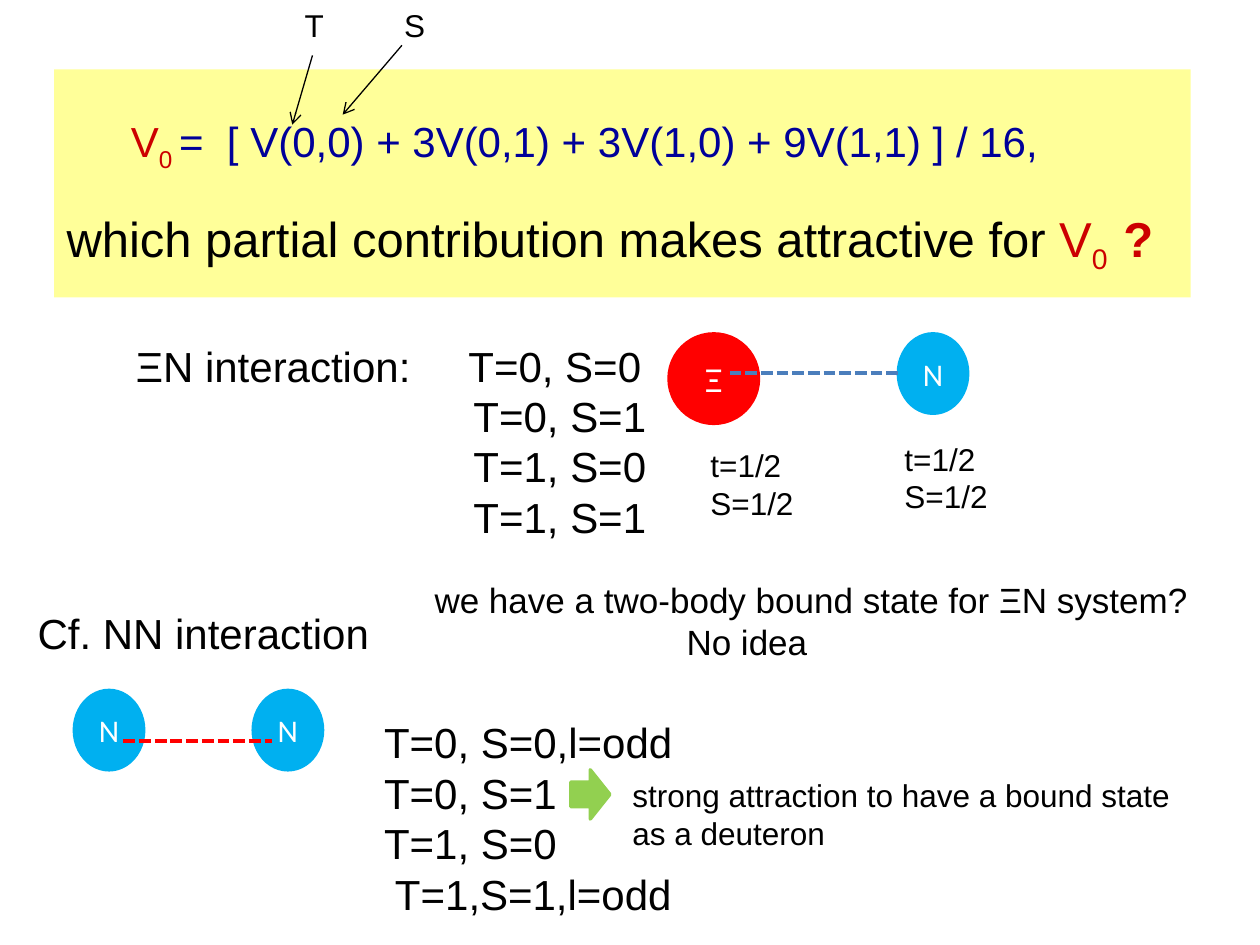
from lxml import etree
from pptx import Presentation
from pptx.dml.color import RGBColor
from pptx.enum.dml import MSO_LINE
from pptx.enum.shapes import MSO_CONNECTOR, MSO_SHAPE
from pptx.enum.text import MSO_ANCHOR, PP_ALIGN
from pptx.oxml.ns import qn
from pptx.util import Inches, Pt

STRAIGHT = MSO_CONNECTOR.STRAIGHT
DASH = MSO_LINE.SQUARE_DOT
RECTANGLE = MSO_SHAPE.RECTANGLE
OVAL = MSO_SHAPE.OVAL
RIGHT_ARROW = MSO_SHAPE.RIGHT_ARROW
MIDDLE = MSO_ANCHOR.MIDDLE
CENTER = PP_ALIGN.CENTER
COLUMNS, ROWS = 100, 75
OVAL_LEFT = 2

BLACK, WHITE, RED, BLUE = "000000", "FFFFFF", "FF0000", "00B0F0"
CRIMSON, NAVY, YELLOW, GREEN, STEEL = "CC0000", "000099", "FFFF99", "92D050", "4B7EBC"


def color(value):
    return RGBColor.from_string(value)


class SlideBuilder:
    def __init__(self, deck):
        self.deck = deck
        self.slide = deck.slides.add_slide(deck.slide_layouts[6])
        self.column = deck.slide_width / COLUMNS
        self.row = deck.slide_height / ROWS

    def place(self, *lengths):
        units = (self.column, self.row) * 2
        return [round(length * unit) for length, unit in zip(lengths, units)]

    def add_spans(self, para, spans, size, ink=BLACK, font="Arial"):
        for text, changes in spans:
            span = para.add_run()
            span.text = text
            values = {"size": Pt(size), "name": font, "bold": changes.get("bold", False)}
            for name, value in values.items():
                setattr(span.font, name, value)
            span.font.color.rgb = color(changes.get("ink", ink))
            if "baseline" in changes:
                span._r.get_or_add_rPr().set("baseline", str(changes["baseline"] * 1000))

    def text(self, at, lines, size, wrap=False, indents=(), tab=None, **spacing):
        box = self.slide.shapes.add_textbox(*self.place(*at))
        frame = box.text_frame
        frame.word_wrap = wrap
        for index, line in enumerate(lines):
            para = frame.paragraphs[0] if index == 0 else frame.add_paragraph()
            for name, value in spacing.items():
                setattr(para, name, value)
            self.add_spans(para, [(line, {})] if isinstance(line, str) else line, size)
            properties = para._p.get_or_add_pPr()
            if indents and indents[index]:
                properties.set("marL", str(Inches(indents[index])))
                properties.set("indent", "0")
            if tab and index == 0:
                stops = etree.SubElement(properties, qn("a:tabLst"))
                etree.SubElement(stops, qn("a:tab"), pos=str(Inches(tab)), algn="l")

    def shape(self, kind, at, fill, outline=True, label="", size=18):
        shape = self.slide.shapes.add_shape(kind, *self.place(*at))
        shape.shadow.inherit = False
        shape.fill.solid()
        shape.fill.fore_color.rgb = color(fill)
        if outline:
            shape.line.color.rgb = color(fill)
            shape.line.width = Pt(2)
        else:
            shape.line.fill.background()
        if label:
            frame = shape.text_frame
            frame.vertical_anchor = MIDDLE
            para = frame.paragraphs[0]
            para.alignment = CENTER
            self.add_spans(para, [(label, {})], size, WHITE, "Calibri")
        return shape

    def nucleon(self, left, top):
        return self.shape(OVAL, (left, top, 5.5, 6.3), BLUE, label="N")

    def line(self, start, end, ink, width, dash=None, arrow=False):
        line = self.slide.shapes.add_connector(STRAIGHT, *self.place(*start, *end))
        line.line.color.rgb = color(ink)
        line.line.width = Pt(width)
        if dash:
            line.line.dash_style = dash
        properties = line._element.spPr
        if arrow:
            etree.SubElement(properties.find(qn("a:ln")), qn("a:tailEnd"), type="arrow")
        etree.SubElement(properties, qn("a:effectLst"))
        return line


def build():
    deck = Presentation()
    deck.slide_width, deck.slide_height = Inches(10), Inches(7.5)
    page = SlideBuilder(deck)

    page.shape(RECTANGLE, (4.3, 5.5, 90.2, 18.1), YELLOW, outline=False)
    question = [
        ("which partial contribution makes attractive for ", {}),
        ("V", {"ink": CRIMSON}),
        ("0  ", {"ink": CRIMSON, "baseline": -25}),
        ("?", {"ink": CRIMSON, "bold": True}),
    ]
    page.text((4.3, 15, 89.7, 6.1), [question], 28, line_spacing=1.2)
    formula = [
        ("V", {"ink": CRIMSON}),
        ("0 ", {"ink": CRIMSON, "baseline": -25}),
        ("=  [ V(0,0) + 3V(0,1) + 3V(1,0) + 9V(1,1) ] / 16,", {"ink": NAVY}),
    ]
    page.text((9.4, 8.7, 75.2, 5.1), [formula], 24, wrap=True, space_before=Pt(7))
    for name, left, start, end in (
        ("T", 23.2, (24.8, 4.4), (23.2, 9.9)),
        ("S", 31.1, (31.9, 3.6), (27.2, 9.1)),
    ):
        page.line(start, end, BLACK, 0.75, arrow=True)
        page.text((left, 0, 3.7, 4), [name], 18)

    channels = ["ΞN interaction:\tT=0, S=0", "T=0, S=1", "T=1, S=0", "T=1, S=1"]
    page.text((9.8, 26.5, 42.7, 17.2), channels, 24, indents=(0, 2.68, 2.68, 2.68), tab=2.64)
    page.shape(OVAL, (53.1, 26.5, 7.1, 7.1), RED, label="Ξ", size=20)
    partner = page.nucleon(71.3, 26.5)
    bond = page.line((57.9, 29.6), (71.3, 29.6), STEEL, 2.25, DASH)
    bond.end_connect(partner, OVAL_LEFT)
    bond.end_x, bond.end_y = page.place(71.3, 29.6)
    for left, top in ((55.4, 34.9), (70.8, 34.4)):
        page.text((left, top, 8.7, 7.1), ["t=1/2", "S=1/2"], 18)

    page.text((2, 47.7, 28.6, 5), ["Cf. NN interaction"], 24)
    for left in (5.9, 20.1):
        page.nucleon(left, 54.8)
    page.line((9.8, 58.8), (21.6, 58.8), RED, 2.25, DASH)
    waves = ["T=0, S=0,l=odd", "T=0, S=1", "T=1, S=0", " T=1,S=1,l=odd"]
    page.text((29.5, 56.4, 25.1, 17.2), waves, 24)
    page.shape(RIGHT_ARROW, (45.3, 61.1, 3.1, 3.9), GREEN)
    result = ["strong attraction to have a bound state", "as a deuteron"]
    page.text((49.2, 61.1, 46.2, 7.1), result, 18)
    doubt = ["we have a two-body bound state for ΞN system?", "No idea"]
    page.text((33.5, 45.4, 62.2, 7.7), doubt, 20, indents=(0, 2))

    deck.save("out.pptx")


if __name__ == "__main__":
    build()
